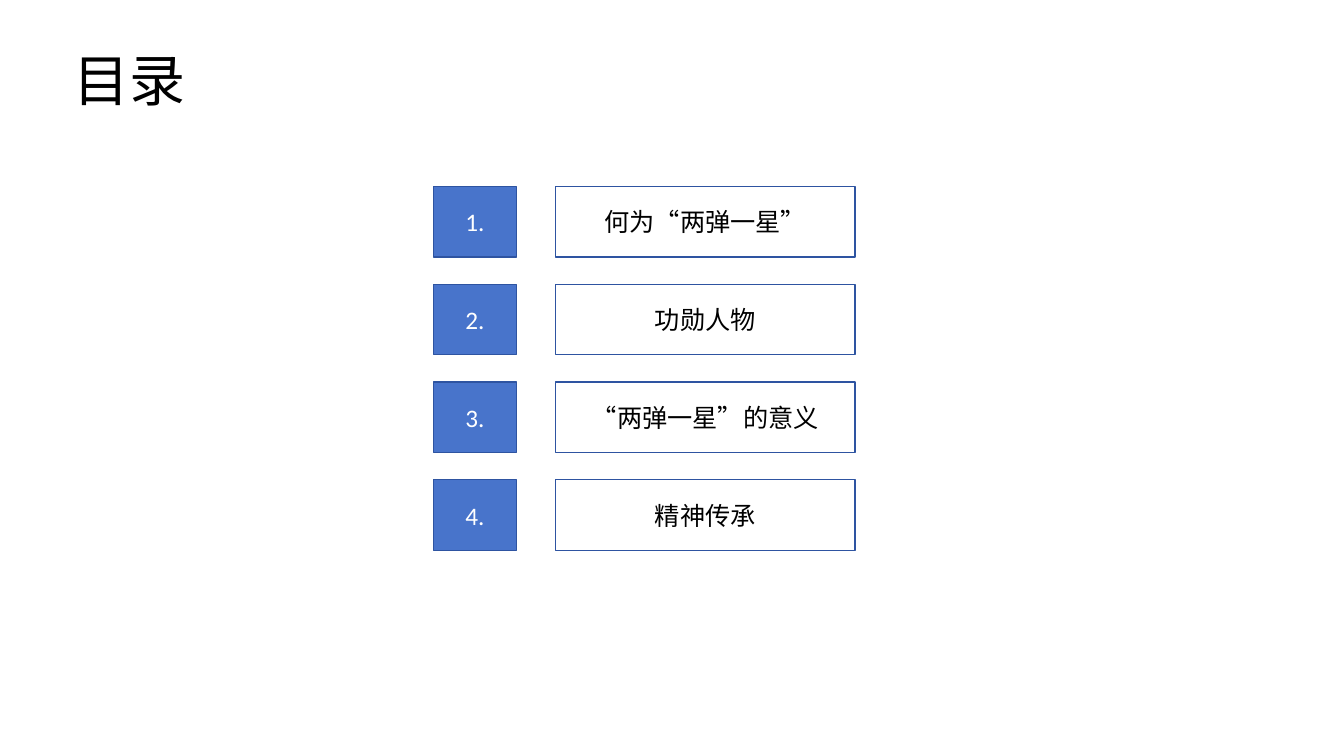
from dataclasses import dataclass

from pptx import Presentation
from pptx.dml.color import RGBColor as Rgb
from pptx.enum.lang import MSO_LANGUAGE_ID as Lang
from pptx.enum.shapes import MSO_SHAPE as Shape
from pptx.enum.text import MSO_ANCHOR as Anchor, MSO_AUTO_SIZE as AutoSize, PP_ALIGN as Align
from pptx.util import Emu, Pt

PX = 9144
TITLE_ONLY = 5


@dataclass(frozen=True)
class Theme:
    font: str = "Calibri"
    ink: Rgb = Rgb(0, 0, 0)
    paper: Rgb = Rgb(255, 255, 255)
    accent: Rgb = Rgb(0x48, 0x74, 0xCB)
    border: Rgb = Rgb(0x2E, 0x54, 0xA1)
    title_size: int = 40
    entry_size: int = 18
    border_width: int = 1


THEME = Theme()


def px(*lengths):
    return [Emu(length * PX) for length in lengths]


def write(frame, words, size, color, align, anchor):
    frame.word_wrap = True
    frame.vertical_anchor = anchor
    paragraph = frame.paragraphs[0]
    paragraph.alignment = align
    run = paragraph.add_run()
    run.text = words
    run.font.name = THEME.font
    run.font.size = Pt(size)
    run.font.color.rgb = color
    run.font.language_id = Lang.SIMPLIFIED_CHINESE


def add_heading(slide, words, box):
    heading = slide.shapes.title
    heading.left, heading.top, heading.width, heading.height = px(*box)
    write(heading.text_frame, words, THEME.title_size, THEME.ink, Align.LEFT, Anchor.TOP)
    heading.text_frame.auto_size = AutoSize.SHAPE_TO_FIT_TEXT


def add_cell(slide, words, box, color, fill=None):
    cell = slide.shapes.add_shape(Shape.RECTANGLE, *px(*box))
    cell.shadow.inherit = False
    if fill is None:
        cell.fill.background()
    else:
        cell.fill.solid()
        cell.fill.fore_color.rgb = fill
    cell.line.color.rgb = THEME.border
    cell.line.width = Pt(THEME.border_width)
    write(cell.text_frame, words, THEME.entry_size, color, Align.CENTER, Anchor.MIDDLE)


def add_contents(slide, chapters, box, number_width=82, gutter=39, row_height=70):
    left, top, width, height = box
    pitch = (height - row_height) // (len(chapters) - 1)
    chapter_offset = number_width + gutter
    for index, chapter in enumerate(chapters):
        row_top = top + index * pitch
        number_box = (left, row_top, number_width, row_height)
        chapter_box = (left + chapter_offset, row_top, width - chapter_offset, row_height)
        add_cell(slide, f"{index + 1}.", number_box, THEME.paper, THEME.accent)
        add_cell(slide, chapter, chapter_box, THEME.ink)


def main():
    deck = Presentation()
    deck.slide_width, deck.slide_height = px(1333, 750)
    slide = deck.slides.add_slide(deck.slide_layouts[TITLE_ONLY])
    add_heading(slide, "目录", (63, 40, 245, 77))
    chapters = ["何为“两弹一星”", "功勋人物", "“两弹一星”的意义", "精神传承"]
    add_contents(slide, chapters, (430, 185, 418, 361))
    deck.save("out.pptx")


if __name__ == "__main__":
    main()
